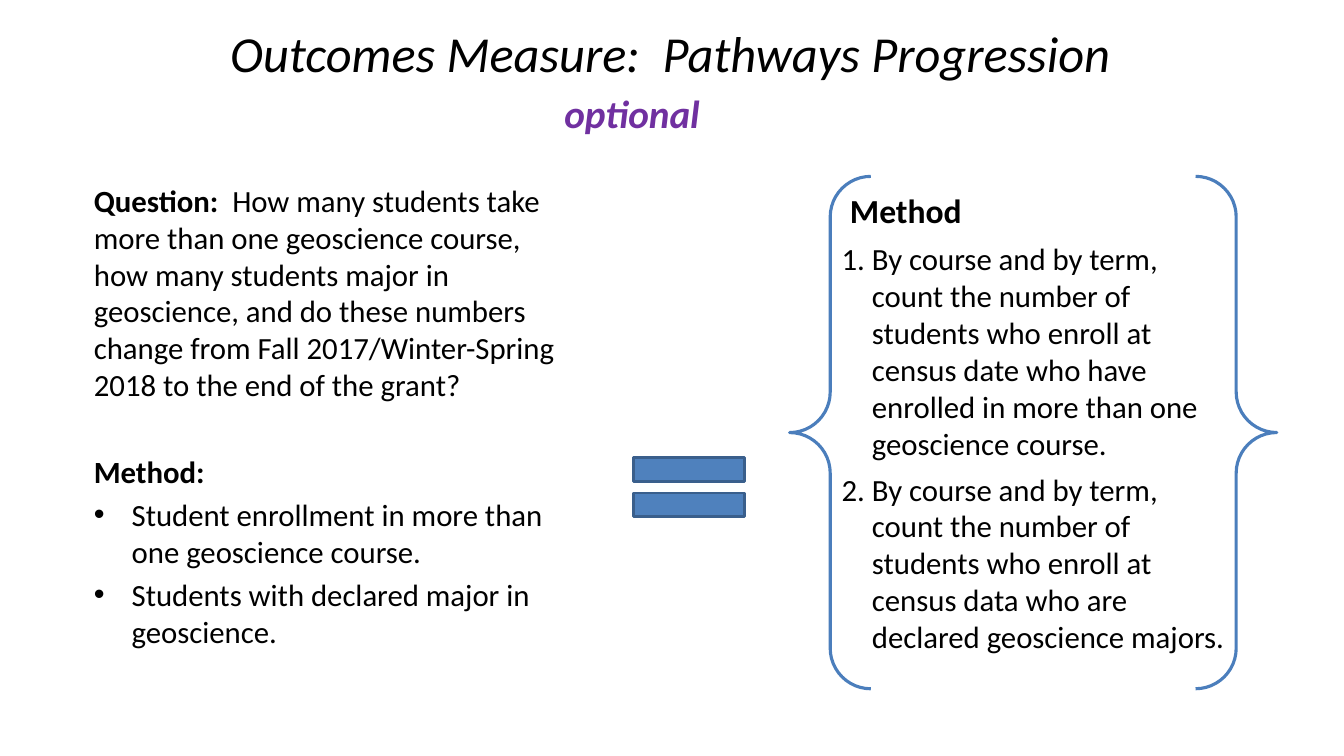
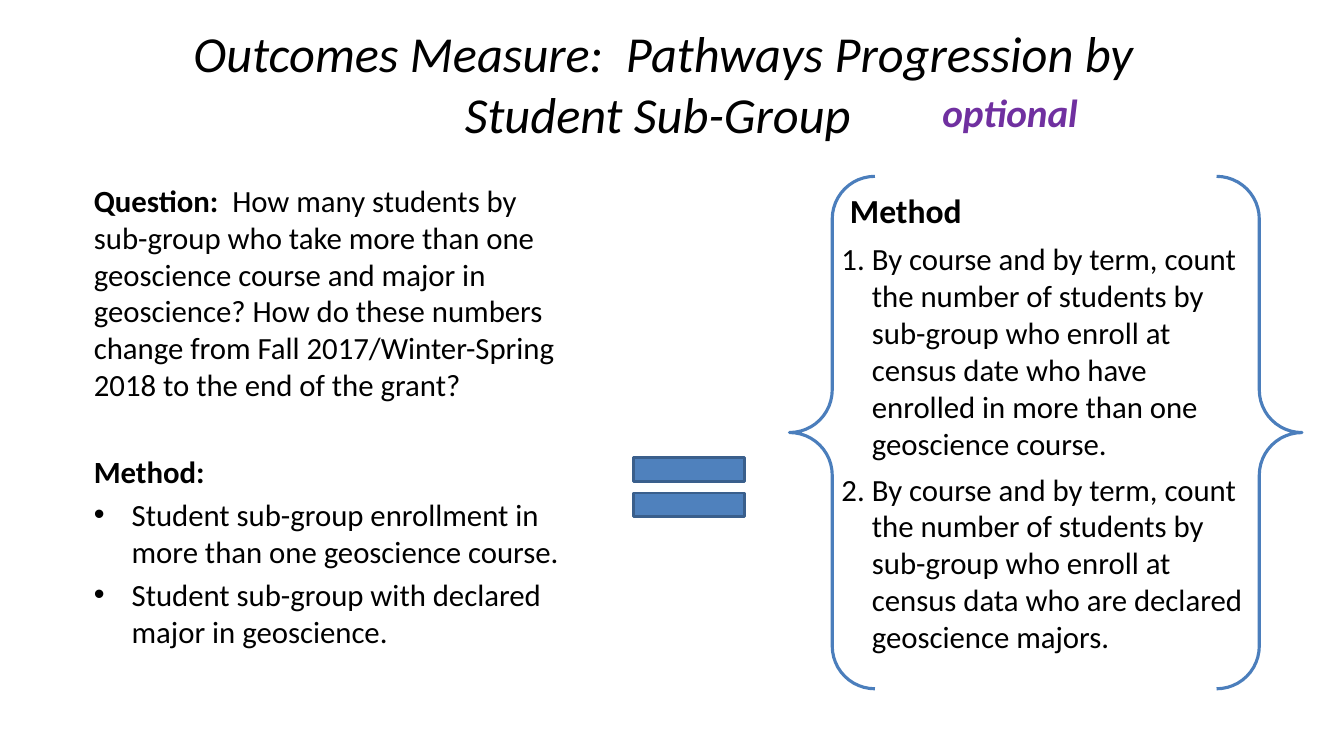
from lxml import etree
from pptx import Presentation
from pptx.dml.color import RGBColor
from pptx.enum.shapes import MSO_SHAPE
from pptx.enum.text import MSO_ANCHOR, PP_ALIGN
from pptx.oxml.ns import qn
from pptx.util import Emu, Pt

PX = 9525
FONT = "Calibri"
BLACK, PURPLE = "000000", "7030A0"
BLUE, EQUALS_EDGE, BRACE_EDGE = "4F81BD", "3A5F8C", "4B7EBC"
LEFT, CENTER = PP_ALIGN.LEFT, PP_ALIGN.CENTER
TOP, MIDDLE = MSO_ANCHOR.TOP, MSO_ANCHOR.MIDDLE
EQUALS, BRACES = MSO_SHAPE.MATH_EQUAL, MSO_SHAPE.DOUBLE_BRACE
BODY_SIZE = 22
BULLET = [("a:buFont", {"typeface": "Arial"}), ("a:buChar", {"char": "•"})]
NUMBER = [("a:buAutoNum", {"type": "arabicPeriod"})]

SLIDES = [
    {
        "title": "Outcomes Measure:  Pathways Progression ",
        "title_box": (40, 20, 1208, 60),
        "optional_box": (528, 80, 152, 55),
        "question": " How many students take more than one geoscience course, "
                    "how many students major in geoscience, and do these numbers "
                    "change from Fall 2017/Winter-Spring 2018 to the end of the grant?",
        "measures": ["Student enrollment in more than one geoscience course.",
                     "Students with declared major in geoscience."],
        "panel_box": (752, 168, 464, 488),
        "steps": ["By course and by term, count the number of students who enroll "
                  "at census date who have enrolled in more than one geoscience course.",
                  "By course and by term, count the number of students who enroll "
                  "at census data who are declared geoscience majors."],
    },
    {
        "title": "Outcomes Measure:  Pathways Progression by Student Sub-Group ",
        "title_box": (128, 24, 1008, 110),
        "optional_box": (888, 79, 152, 55),
        "question": " How many students by sub-group who take more than one geoscience "
                    "course and major in geoscience? How do these numbers change from "
                    "Fall 2017/Winter-Spring 2018 to the end of the grant?",
        "measures": ["Student sub-group enrollment in more than one geoscience course.",
                     "Student sub-group with declared major in geoscience."],
        "panel_box": (752, 168, 488, 488),
        "steps": ["By course and by term, count the number of students by sub-group who "
                  "enroll at census date who have enrolled in more than one geoscience course.",
                  "By course and by term, count the number of students by sub-group who "
                  "enroll at census data who are declared geoscience majors."],
    },
]


def px(length):
    return Emu(length * PX)


def rgb(value):
    return RGBColor.from_string(value)


def add_frame(slide, box, anchor=TOP):
    frame = slide.shapes.add_textbox(*map(px, box)).text_frame
    frame.word_wrap = True
    frame.vertical_anchor = anchor
    return frame


def write(frame, text, lead="", size=BODY_SIZE, color=BLACK, bold=False,
          italic=False, align=LEFT, before=0, marker=(), indent=0):
    paragraph = frame.paragraphs[0]
    if paragraph.runs:
        paragraph = frame.add_paragraph()
    paragraph.alignment = align
    paragraph.space_before = Pt(before)
    for words, heavy in ((lead, True), (text, bold)):
        if words:
            run = paragraph.add_run()
            run.text = words
            font = run.font
            font.name, font.size = FONT, Pt(size)
            font.bold, font.italic = heavy, italic
            font.color.rgb = rgb(color)
    if marker:
        properties = paragraph._p.get_or_add_pPr()
        properties.set("marL", str(px(indent)))
        properties.set("indent", str(px(-indent)))
        for tag, attributes in marker:
            etree.SubElement(properties, qn(tag), attributes)


def add_outline(slide, kind, box, edge, weight, fill=None):
    shape = slide.shapes.add_shape(kind, *map(px, box))
    shape.shadow.inherit = False
    if fill:
        shape.fill.solid()
        shape.fill.fore_color.rgb = rgb(fill)
    else:
        shape.fill.background()
    shape.line.color.rgb = rgb(edge)
    shape.line.width = Pt(weight)


def add_heading(slide, title, title_box, optional_box):
    write(add_frame(slide, title_box, MIDDLE), title, size=36, italic=True, align=CENTER)
    write(add_frame(slide, optional_box), "optional", size=28, color=PURPLE,
          bold=True, italic=True)


def add_question(slide, box, question, measures):
    frame = add_frame(slide, box)
    write(frame, question, lead="Question: ")
    write(frame, "Method:", bold=True, before=35.5)
    for measure in measures:
        write(frame, measure, before=4.4, marker=BULLET, indent=36)


def add_method_panel(slide, box, steps):
    left, top, width, height = box
    add_outline(slide, BRACES, box, BRACE_EDGE, 2.25)
    frame = add_frame(slide, (left + 40, top + 56, width - 78, height - 44))
    for index, step in enumerate(steps):
        write(frame, step, before=6 if index else 0, marker=NUMBER, indent=29)
    write(add_frame(slide, (left + 48, top + 8, 140, 48)), "Method", size=24, bold=True)


def add_measure_slide(deck, content):
    slide = deck.slides.add_slide(deck.slide_layouts[6])
    add_heading(slide, content["title"], content["title_box"], content["optional_box"])
    add_question(slide, (80, 168, 472, 460), content["question"], content["measures"])
    add_outline(slide, EQUALS, (584, 416, 144, 96), EQUALS_EDGE, 2, fill=BLUE)
    add_method_panel(slide, content["panel_box"], content["steps"])


def main():
    deck = Presentation()
    deck.slide_width, deck.slide_height = px(1280), px(720)
    for content in SLIDES:
        add_measure_slide(deck, content)
    deck.save("out.pptx")


if __name__ == "__main__":
    main()
